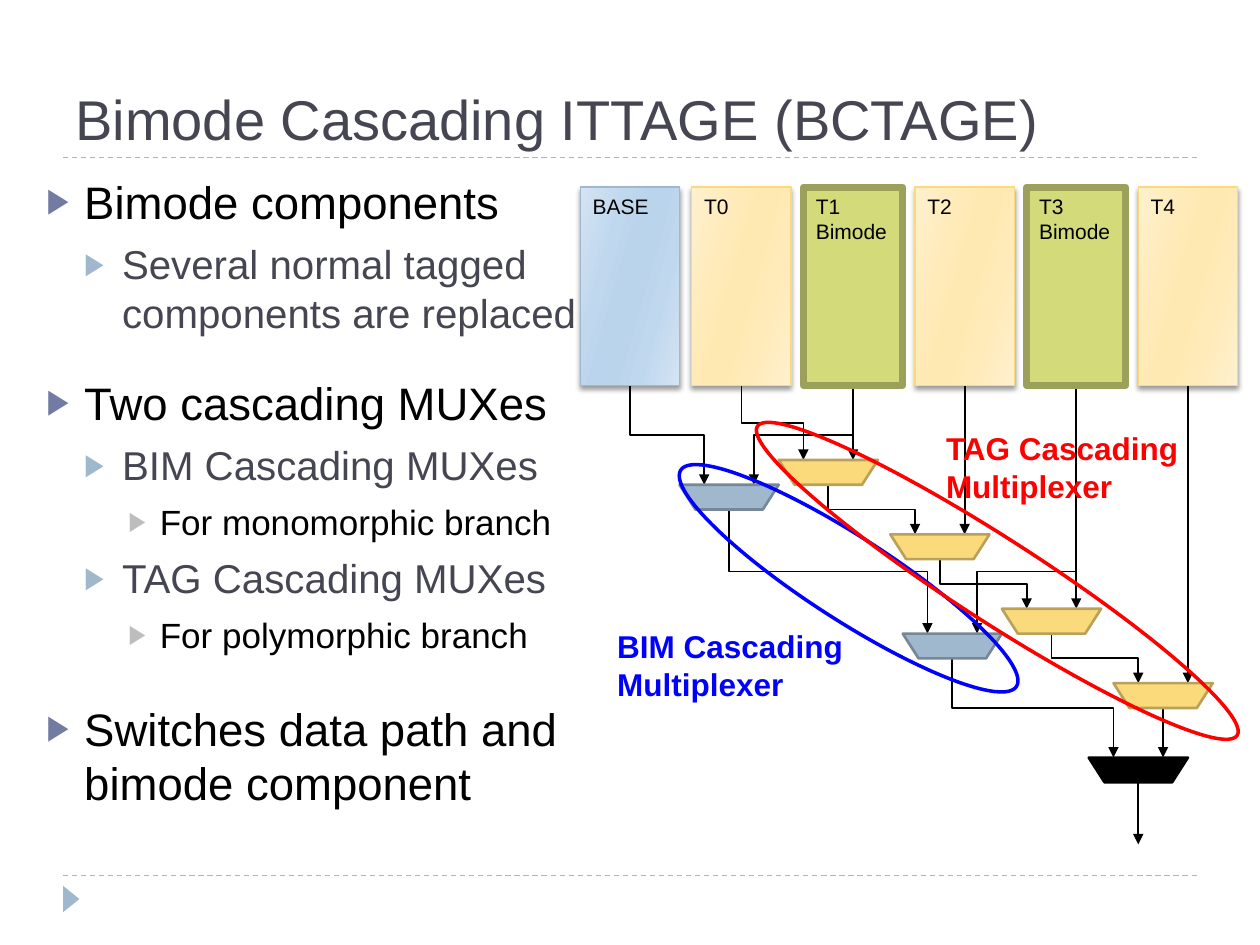
"""Builds the Bimode Cascading ITTAGE (BCTAGE) slide."""
from lxml import etree
from pptx import Presentation, util as u
from pptx.dml.color import RGBColor
from pptx.enum import dml, shapes, text
from pptx.oxml.ns import qn

COLORS = {
    "title": "464653", "black": "000000", "bullet": "727CA3", "pale": "BDBDBD",
    "steel": "9FB8CD", "steel_edge": "768898", "gold": "FADA7A", "gold_edge": "B9A15A",
    "green": "D2DA7A", "green_edge": "9BA15A", "bim": "0000FF", "tag": "FF0000",
}
GRADIENTS = {
    "steel": ("D3E3F2", "C0D8EE", "BAD4EC", "BAD4EC", "C0D8EE", "D3E3F2"),
    "gold": ("FFF0CF", "FFEBBA", "FFE9B3", "FFE9B3", "FFEBBA", "FFF0CF"),
}
GRADIENT_STOPS = (0, 30, 45, 55, 73, 100)
TITLE = "Bimode Cascading ITTAGE (BCTAGE)"

LEVELS = [
    {"size": 26, "color": "black", "bullet": "bullet", "margin": 0.3, "hang": 0.3},
    {"size": 23, "color": "title", "bullet": "steel", "margin": 0.6, "hang": 0.3},
    {"size": 20, "color": "black", "bullet": "pale", "margin": 0.9, "hang": 0.25},
]
OUTLINE = [
    (0, 2, "Bimode components"),
    (1, 6.5, "Several normal tagged components are replaced"),
    (0, 22, "Two cascading MUXes"),
    (1, 6.5, "BIM Cascading MUXes"),
    (2, 6.5, "For monomorphic branch"),
    (1, 6.5, "TAG Cascading MUXes"),
    (2, 6.5, "For polymorphic branch"),
    (0, 26, "Switches data path and bimode component"),
]
COMPONENTS = [
    ("steel", ["BASE"]), ("gold", ["T0"]), ("green", ["T1", "Bimode"]),
    ("gold", ["T2"]), ("green", ["T3", "Bimode"]), ("gold", ["T4"]),
]
MUXES = [
    ("steel", "steel_edge", [(8, 24), (26, 36)]),
    ("gold", "gold_edge", [(16, 22), (25, 28), (34, 34), (43, 40)]),
    ("black", "black", [(41, 46)]),
]
WIRES = [
    (22, 16, 22, 22), (13, 16, 18, 22), (31, 16, 31, 28), (40, 16, 40, 34),
    (49, 16, 49, 40), (40, 16, 32, 36, 0.75), (22, 16, 14, 24), (4, 16, 10, 24),
    (20, 24, 27, 28), (29, 30, 36, 34), (38, 36, 45, 40), (47, 42, 47, 46),
    (30, 38, 43, 46), (12, 26, 28, 36), (45, 48, 45, 53),
]
CASCADES = [
    ("bim", (51.5, 56.8, 31.7, 8.8), (48, 65.73, 23.1, 9.47), "BIM Cascading Multiplexer"),
    ("tag", (56.5, 57.07, 45.3, 8.8), (74.1, 44.8, 25.9, 9.47), "TAG Cascading Multiplexer"),
]
UNIT = u.Mm(2.5)
PITCH, CARD_WIDTH, CARD_HEIGHT, MUX_HEIGHT = 9, 8, 16, 2

presentation = Presentation()
presentation.slide_width, presentation.slide_height = u.Inches(10), u.Inches(7.5)
slide = presentation.slides.add_slide(presentation.slide_layouts[6])


def share(*percents):
    sides = (presentation.slide_width, presentation.slide_height) * 2
    return [int(side * percent / 100) for side, percent in zip(sides, percents)]


ORIGIN = share(46.05, 19.8)


def grid(left, top, width=0, height=0):
    return [int(ORIGIN[0] + left * UNIT), int(ORIGIN[1] + top * UNIT),
            int(width * UNIT), int(height * UNIT)]


def rgb(name):
    return RGBColor.from_string(COLORS[name])


def add_shape(kind, box, fill, edge, width, rotation=0):
    shape = slide.shapes.add_shape(kind, *box)
    shape.shadow.inherit = False
    shape.rotation = rotation
    if fill:
        shape.fill.solid()
        shape.fill.fore_color.rgb = rgb(fill)
    else:
        shape.fill.background()
    if edge:
        shape.line.color.rgb = rgb(edge)
        shape.line.width = u.Pt(width)
    else:
        shape.line.fill.background()
    return shape


def add_text(box, lines, size, color, bold=False, anchor=text.MSO_ANCHOR.TOP):
    frame = slide.shapes.add_textbox(*box).text_frame
    frame.word_wrap = True
    frame.vertical_anchor = anchor
    frame.text = "\n".join(lines)
    for paragraph in frame.paragraphs:
        style_font(paragraph.font, size, color, bold)
    return frame


def style_font(font, size, color, bold=False):
    font.name, font.size, font.bold = "Arial", u.Pt(size), bold
    font.color.rgb = rgb(color)


def add_node(parent, tag, **attributes):
    node = etree.SubElement(parent, qn(tag))
    for key, value in attributes.items():
        node.set(key, str(value))
    return node


def add_line(kind, ends, color, width):
    line = slide.shapes.add_connector(kind, *ends)
    line.line.color.rgb = rgb(color)
    line.line.width = u.Pt(width)
    add_node(line.element.spPr, "a:effectLst")
    return line


def add_wire(x1, y1, x2, y2, bend=0.5):
    run, drop = abs(x2 - x1), y2 - y1
    if run:
        left, top = (x1 + x2 - drop) / 2, (y1 + y2 - run) / 2
        ends = grid(left, top)[:2] + grid(left + drop, top + run)[:2]
        wire = add_line(shapes.MSO_CONNECTOR.ELBOW, ends, "black", 1)
        properties = wire.element.spPr
        transform = properties.find(qn("a:xfrm"))
        transform.set("rot", str((270 if x2 > x1 else 90) * 60000))
        if x2 > x1:
            transform.set("flipH", "1")
        guides = properties.find(qn("a:prstGeom")).find(qn("a:avLst"))
        add_node(guides, "a:gd", name="adj1", fmla=f"val {int(bend * 100000)}")
    else:
        ends = grid(x1, y1)[:2] + grid(x2, y2)[:2]
        wire = add_line(shapes.MSO_CONNECTOR.STRAIGHT, ends, "black", 1)
    add_node(wire.element.spPr.find(qn("a:ln")), "a:tailEnd", type="triangle")


def add_card(column, color, lines):
    box = grid(column * PITCH, 0, CARD_WIDTH, CARD_HEIGHT)
    if color in GRADIENTS:
        card = add_shape(shapes.MSO_SHAPE.RECTANGLE, box, color, color, 0.75)
        card.fill.gradient()
        card.fill.gradient_angle = 344
        properties = card.element.spPr
        stops = properties.find(qn("a:gradFill")).find(qn("a:gsLst"))
        for stop in list(stops):
            stops.remove(stop)
        for position, value in zip(GRADIENT_STOPS, GRADIENTS[color]):
            add_node(add_node(stops, "a:gs", pos=position * 1000), "a:srgbClr", val=value)
        shadow = add_node(properties.find(qn("a:effectLst")), "a:outerShdw", blurRad=u.Pt(3),
                          dist=u.Pt(2), dir=90 * 60000, rotWithShape=0)
        add_node(add_node(shadow, "a:srgbClr", val=COLORS["black"]), "a:alpha", val=40000)
    else:
        add_shape(shapes.MSO_SHAPE.RECTANGLE, box, color, color + "_edge", 4)
    add_text(grid(column * PITCH, 0, CARD_WIDTH, 1 + 2 * len(lines)), lines, 12, "black")


def add_outline():
    frame = add_text(share(2.7, 17.73, 44.2, 72), [line for *_, line in OUTLINE], 26, "black")
    for paragraph, (depth, gap, _) in zip(frame.paragraphs, OUTLINE):
        level = LEVELS[depth]
        style_font(paragraph.font, level["size"], level["color"])
        paragraph.level, paragraph.space_before = depth, u.Pt(gap)
        properties = paragraph._p.get_or_add_pPr()
        properties.set("marL", str(u.Inches(level["margin"])))
        properties.set("indent", str(-u.Inches(level["hang"])))
        bullet = [add_node(properties, "a:buClr"),
                  add_node(properties, "a:buSzPct", val=76000),
                  add_node(properties, "a:buFont", typeface="Arial"),
                  add_node(properties, "a:buChar", char="▶")]
        add_node(bullet[0], "a:srgbClr", val=COLORS[level["bullet"]])
        properties.append(properties.find(qn("a:defRPr")))


for height in (92.67, 16.67):
    rule = add_line(shapes.MSO_CONNECTOR.STRAIGHT, share(5, height, 95, height), "steel", 0.75)
    rule.line.dash_style = dml.MSO_LINE.DASH
add_shape(shapes.MSO_SHAPE.ISOSCELES_TRIANGLE, share(4.6, 94.27, 2.1, 1.73), "steel", None, 0, 90)
for wire in WIRES:
    add_wire(*wire)
for fill, edge, places in MUXES:
    for place in places:
        mux = add_shape(shapes.MSO_SHAPE.TRAPEZOID, grid(*place, CARD_WIDTH, MUX_HEIGHT),
                        fill, edge, 1.5, 180)
        mux.adjustments[0] = 0.64
add_text(share(5, 2.27, 90, 14.4), [TITLE], 32, "title", anchor=text.MSO_ANCHOR.BOTTOM)
for color, ring, label, caption in CASCADES:
    add_shape(shapes.MSO_SHAPE.OVAL, share(*ring), None, color, 2, 32.8)
    add_text(share(*label), [caption], 18, color, bold=True)
add_outline()
for column, (color, lines) in enumerate(COMPONENTS):
    add_card(column, color, lines)
presentation.save("out.pptx")
